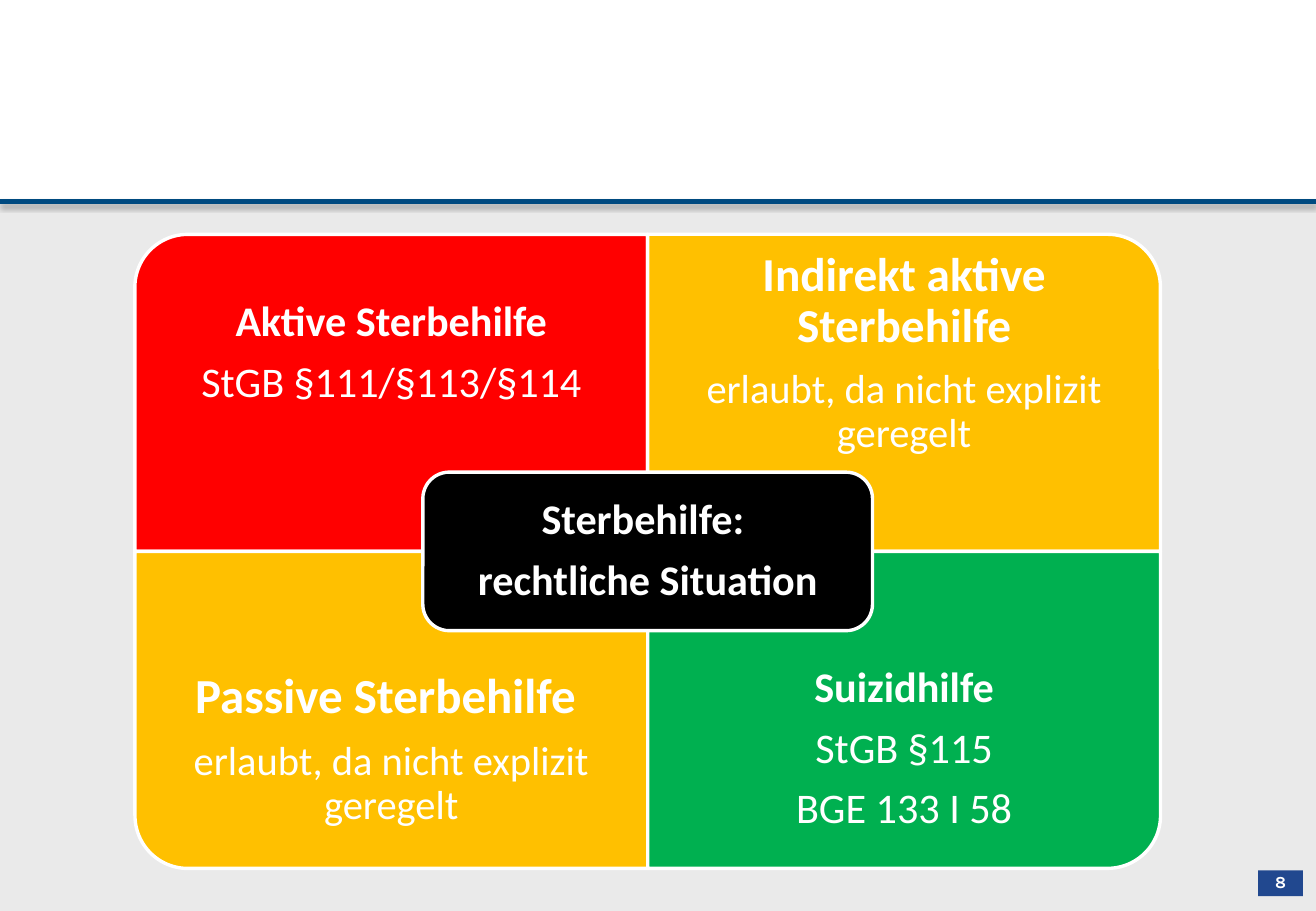
from lxml import etree
from pptx import Presentation
from pptx.dml.color import RGBColor
from pptx.enum import shapes, text
from pptx.oxml import ns
from pptx.util import Cm, Pt

WHITE = RGBColor(0xFF, 0xFF, 0xFF)
BLACK = RGBColor(0, 0, 0)
GREY = RGBColor(0xEA, 0xEA, 0xEA)
RULE_BLUE = RGBColor(0x00, 0x4A, 0x80)
BADGE_BLUE = RGBColor(0x21, 0x48, 0x8F)
RED = RGBColor(0xFF, 0, 0)
AMBER = RGBColor(0xFF, 0xC0, 0)
GREEN = RGBColor(0x00, 0xB0, 0x50)

SLIDE_WIDTH, SLIDE_HEIGHT = 27.51, 19.05
HEADER_HEIGHT = 4.22

# Column, row, rotation, colour, text margin, then (text, size, bold) lines
QUADRANTS = [
    (0, 0, 270, RED, 0.48, [("Aktive Sterbehilfe", 25, True),
                            ("StGB §111/§113/§114", 25, False)]),
    (1, 0, 0, AMBER, 0.56, [("Indirekt aktive Sterbehilfe", 28, True),
                            ("erlaubt, da nicht explizit geregelt", 24, False)]),
    (0, 1, 180, AMBER, 0.58, [("Passive Sterbehilfe ", 29, True),
                              ("erlaubt, da nicht explizit geregelt", 24, False)]),
    (1, 1, 90, GREEN, 0.48, [("Suizidhilfe", 25, True),
                             ("StGB §115", 25, False),
                             ("BGE 133 I 58", 25, False)]),
]
HUB_LINES = [("Sterbehilfe: ", 25, True), ("rechtliche Situation", 25, True)]


def add_box(slide, kind, left, top, width, height, fill, outlined=False):
    shape = slide.shapes.add_shape(kind, Cm(left), Cm(top), Cm(width), Cm(height))
    shape.shadow.inherit = False
    shape.fill.solid()
    shape.fill.fore_color.rgb = fill
    if outlined:
        shape.line.color.rgb = WHITE
        shape.line.width = Pt(2)
    else:
        shape.line.fill.background()
    return shape


def write_lines(shape, lines, margin, font="Calibri"):
    frame = shape.text_frame
    frame.word_wrap = True
    frame.vertical_anchor = text.MSO_ANCHOR.MIDDLE
    frame.margin_left = frame.margin_right = Cm(margin)
    frame.margin_top = frame.margin_bottom = Cm(margin)
    for index, (words, size, bold) in enumerate(lines):
        paragraph = frame.add_paragraph() if index else frame.paragraphs[0]
        paragraph.alignment = text.PP_ALIGN.CENTER
        paragraph.line_spacing = 0.9
        paragraph.space_after = Pt(round(0.35 * size, 1))
        run = paragraph.add_run()
        run.text = words
        run.font.name = font
        run.font.size = Pt(size)
        run.font.bold = bold
        run.font.color.rgb = WHITE


def add_shadow(connector):
    effects = etree.SubElement(connector._element.spPr, ns.qn("a:effectLst"))
    shadow = etree.SubElement(effects, ns.qn("a:outerShdw"), blurRad=str(Pt(3.1)),
                              dist=str(Pt(1.8)), dir="5400000", rotWithShape="0")
    color = etree.SubElement(shadow, ns.qn("a:srgbClr"), val=str(BLACK))
    etree.SubElement(color, ns.qn("a:alpha"), val="35000")


def draw_background(slide, width, height):
    # Grey body below the header, with a shadowed rule
    add_box(slide, shapes.MSO_SHAPE.RECTANGLE, 0, HEADER_HEIGHT,
            width, height - HEADER_HEIGHT, GREY)
    rule = slide.shapes.add_connector(shapes.MSO_CONNECTOR.STRAIGHT, 0,
                                      Cm(HEADER_HEIGHT), Cm(width), Cm(HEADER_HEIGHT))
    rule.line.color.rgb = RULE_BLUE
    rule.line.width = Pt(3)
    add_shadow(rule)


def draw_page_number(slide, left, top, width, height):
    badge = add_box(slide, shapes.MSO_SHAPE.RECTANGLE, left, top, width, height, BADGE_BLUE)
    write_lines(badge, [("8", 10, True)], 0, "Karla")
    badge.text_frame.paragraphs[0].space_after = Pt(0)


def draw_matrix(slide, left, top, width, height):
    cell_width, cell_height = width / 2, height / 2
    text_height = 0.75 * cell_height
    # Quadrants, each turned so that its round corner points outwards
    for column, row, rotation, color, margin, lines in QUADRANTS:
        x, y = left + column * cell_width, top + row * cell_height
        w, h = cell_width, cell_height
        if rotation % 180:
            w, h = h, w
        panel = add_box(slide, shapes.MSO_SHAPE.ROUND_1_RECTANGLE,
                        x + (cell_width - w) / 2, y + (cell_height - h) / 2,
                        w, h, color, outlined=True)
        panel.rotation = rotation
        # Text keeps clear of the hub
        text_top = y + row * (cell_height - text_height)
        label = slide.shapes.add_textbox(Cm(x), Cm(text_top),
                                         Cm(cell_width), Cm(text_height))
        write_lines(label, lines, margin)
    # Hub in the centre
    hub_width, hub_height = 9.4, cell_height / 2
    hub = add_box(slide, shapes.MSO_SHAPE.ROUNDED_RECTANGLE,
                  left + (width - hub_width) / 2, top + (height - hub_height) / 2,
                  hub_width, hub_height, BLACK, outlined=True)
    write_lines(hub, HUB_LINES, 0.25)


def main():
    presentation = Presentation()
    presentation.slide_width = Cm(SLIDE_WIDTH)
    presentation.slide_height = Cm(SLIDE_HEIGHT)
    slide = presentation.slides.add_slide(presentation.slide_layouts[6])
    draw_background(slide, SLIDE_WIDTH, SLIDE_HEIGHT)
    draw_page_number(slide, 26.3, 18.2, 0.94, 0.54)
    draw_matrix(slide, 2.82, 4.9, 21.44, 13.26)
    presentation.save("out.pptx")


if __name__ == "__main__":
    main()
